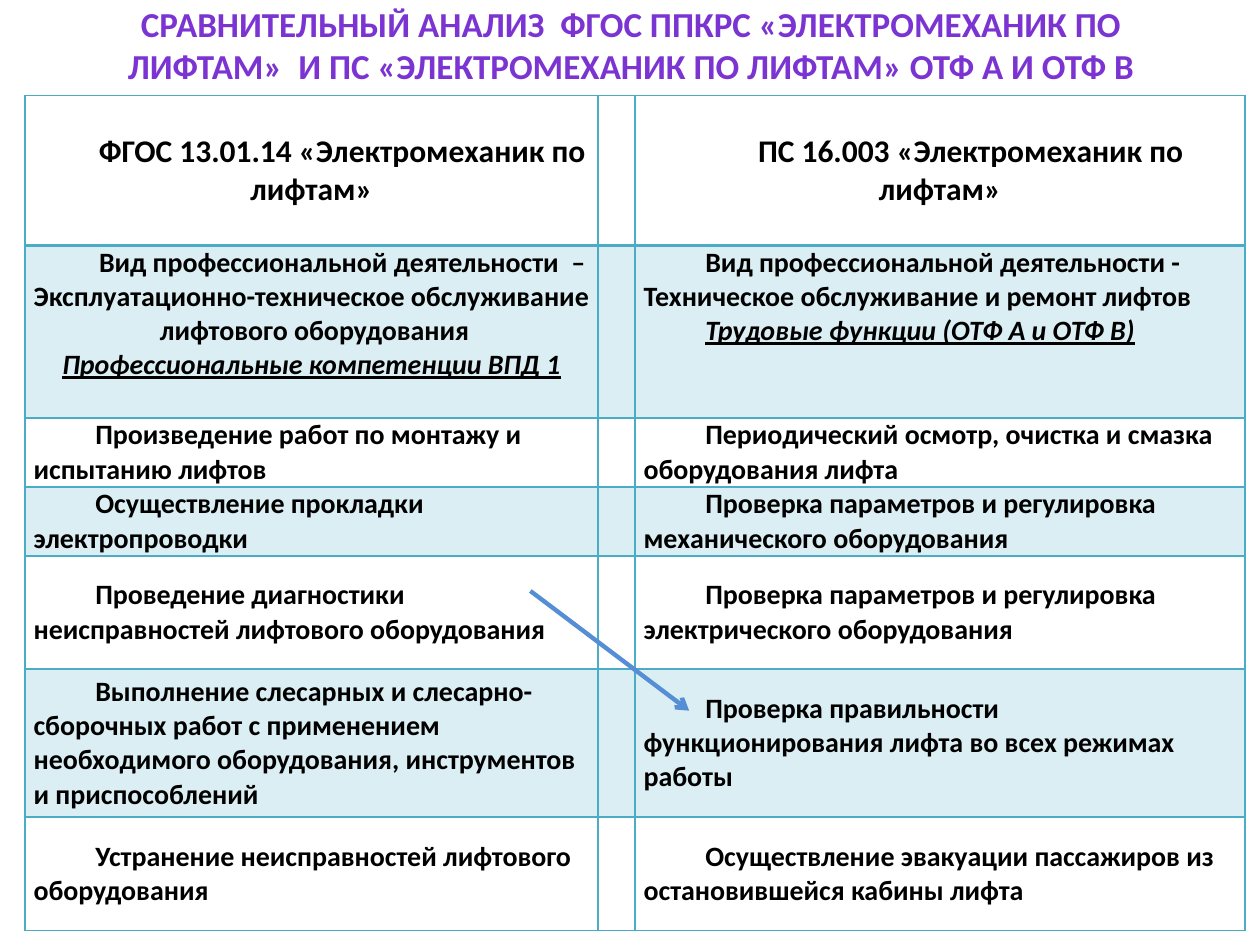
from lxml.etree import SubElement
from pptx import Presentation
from pptx.dml.color import RGBColor
from pptx.enum.shapes import MSO_CONNECTOR
from pptx.enum.text import MSO_ANCHOR, PP_ALIGN
from pptx.oxml.ns import qn
from pptx.util import Pt

PURPLE = RGBColor(0x7B, 0x34, 0xD2)
BLACK = RGBColor(0x00, 0x00, 0x00)
TEAL = RGBColor(0x4B, 0xAC, 0xC6)
BLUE = RGBColor(0x55, 0x8E, 0xD5)

FONT = "Calibri"
INDENT = 35.3
COLUMN_WIDTHS = [327.6, 21, 348.7]
ROW_HEIGHTS = [85.5, 98.7, 39.4, 39.4, 64.8, 84.4, 64.8]

TITLE = ("СРАВНИТЕЛЬНЫЙ АНАЛИЗ  ФГОС ППКРС «ЭЛЕКТРОМЕХАНИК ПО ЛИФТАМ»  "
         "И ПС «ЭЛЕКТРОМЕХАНИК ПО ЛИФТАМ» ОТФ А И ОТФ В")
HEADERS = ("ФГОС 13.01.14 «Электромеханик по лифтам»",
           "ПС 16.003 «Электромеханик по лифтам»")
ACTIVITIES = (
    ("Вид профессиональной деятельности  – Эксплуатационно-техническое "
     "обслуживание  лифтового оборудования",
     "Профессиональные компетенции ВПД 1", PP_ALIGN.CENTER, 0),
    ("Вид профессиональной деятельности - Техническое обслуживание и ремонт лифтов",
     "Трудовые функции (ОТФ А и ОТФ В)", PP_ALIGN.LEFT, INDENT),
)
FUNCTIONS = [
    ("Произведение работ по монтажу и испытанию лифтов",
     "Периодический осмотр, очистка и смазка оборудования лифта"),
    ("Осуществление прокладки электропроводки",
     "Проверка параметров и регулировка механического оборудования"),
    ("Проведение диагностики неисправностей лифтового оборудования",
     "Проверка параметров и регулировка электрического оборудования"),
    ("Выполнение слесарных и слесарно-сборочных работ с применением "
     "необходимого оборудования, инструментов и приспособлений",
     "Проверка правильности функционирования лифта во всех режимах работы"),
    ("Устранение неисправностей лифтового оборудования",
     "Осуществление эвакуации пассажиров из остановившейся кабины лифта"),
]


def write(paragraph, text, size, color=BLACK, align=PP_ALIGN.LEFT, indent=0, emphasis=False):
    paragraph.alignment = align
    if indent:
        properties = paragraph._p.get_or_add_pPr()
        properties.set("marL", "0")
        properties.set("indent", str(Pt(indent)))
    run = paragraph.add_run()
    run.text = text
    font = run.font
    font.name, font.size, font.bold = FONT, Pt(size), True
    font.color.rgb = color
    if emphasis:
        font.italic = font.underline = True


def add_title(slide, left, top, width, height):
    shape = slide.shapes.add_textbox(Pt(left), Pt(top), Pt(width), Pt(height))
    frame = shape.text_frame
    frame.word_wrap = True
    frame.vertical_anchor = MSO_ANCHOR.MIDDLE
    write(frame.paragraphs[0], TITLE, 20, PURPLE, PP_ALIGN.CENTER)


def add_border(cell, side, width):
    line = SubElement(cell._tc.get_or_add_tcPr(), qn(f"a:{side}"), w=str(Pt(width)))
    fill = SubElement(line, qn("a:solidFill"))
    SubElement(fill, qn("a:srgbClr"), val=str(TEAL))


def format_cell(cell, row):
    cell.margin_left = cell.margin_right = Pt(5)
    cell.margin_top = cell.margin_bottom = Pt(0)
    cell.vertical_anchor = MSO_ANCHOR.TOP if row == 1 else MSO_ANCHOR.MIDDLE
    widths = {"lnL": 1, "lnR": 1, "lnT": 2 if row == 1 else 1, "lnB": 2 if row == 0 else 1}
    for side, width in widths.items():
        add_border(cell, side, width)
    if row % 2:
        cell.fill.solid()
        cell.fill.fore_color.rgb = TEAL
        color = cell._tc.tcPr.find(f"{qn('a:solidFill')}/{qn('a:srgbClr')}")
        SubElement(color, qn("a:alpha"), val="20000")
    else:
        cell.fill.background()


def add_comparison(slide, left, top, width, height):
    frame = slide.shapes.add_table(len(ROW_HEIGHTS), len(COLUMN_WIDTHS),
                                   Pt(left), Pt(top), Pt(width), Pt(height))
    table = frame.table
    table.first_row = table.horz_banding = False
    for column, share in zip(table.columns, COLUMN_WIDTHS):
        column.width = Pt(width * share / sum(COLUMN_WIDTHS))
    for row, share in zip(table.rows, ROW_HEIGHTS):
        row.height = Pt(height * share / sum(ROW_HEIGHTS))
    for row in range(len(ROW_HEIGHTS)):
        for column in range(len(COLUMN_WIDTHS)):
            format_cell(table.cell(row, column), row)

    for column, header in zip((0, 2), HEADERS):
        paragraph = table.cell(0, column).text_frame.paragraphs[0]
        write(paragraph, header, 18, align=PP_ALIGN.CENTER, indent=INDENT)
    for column, (activity, subject, align, indent) in zip((0, 2), ACTIVITIES):
        text_frame = table.cell(1, column).text_frame
        write(text_frame.paragraphs[0], activity, 16, align=align, indent=INDENT)
        write(text_frame.add_paragraph(), subject, 16, align=align, indent=indent, emphasis=True)
    for row, pair in enumerate(FUNCTIONS, start=2):
        for column, text in zip((0, 2), pair):
            paragraph = table.cell(row, column).text_frame.paragraphs[0]
            write(paragraph, text, 16, indent=INDENT)


def add_link_arrow(slide, left, top, width, height):
    connector = slide.shapes.add_connector(
        MSO_CONNECTOR.STRAIGHT, Pt(left), Pt(top), Pt(left + width), Pt(top + height))
    connector.line.color.rgb = BLUE
    connector.line.width = Pt(2.5)
    SubElement(connector.line._get_or_add_ln(), qn("a:tailEnd"), type="arrow")
    SubElement(connector._element.spPr, qn("a:effectLst"))


def main():
    presentation = Presentation()
    presentation.slide_width, presentation.slide_height = Pt(720), Pt(540)
    slide = presentation.slides.add_slide(presentation.slide_layouts[6])
    add_title(slide, 36.7, 0.7, 648, 49.7)
    add_comparison(slide, 14.2, 54.7, sum(COLUMN_WIDTHS), sum(ROW_HEIGHTS))
    add_link_arrow(slide, 303.1, 337.7, 90.7, 68.4)
    presentation.save("out.pptx")


if __name__ == "__main__":
    main()
